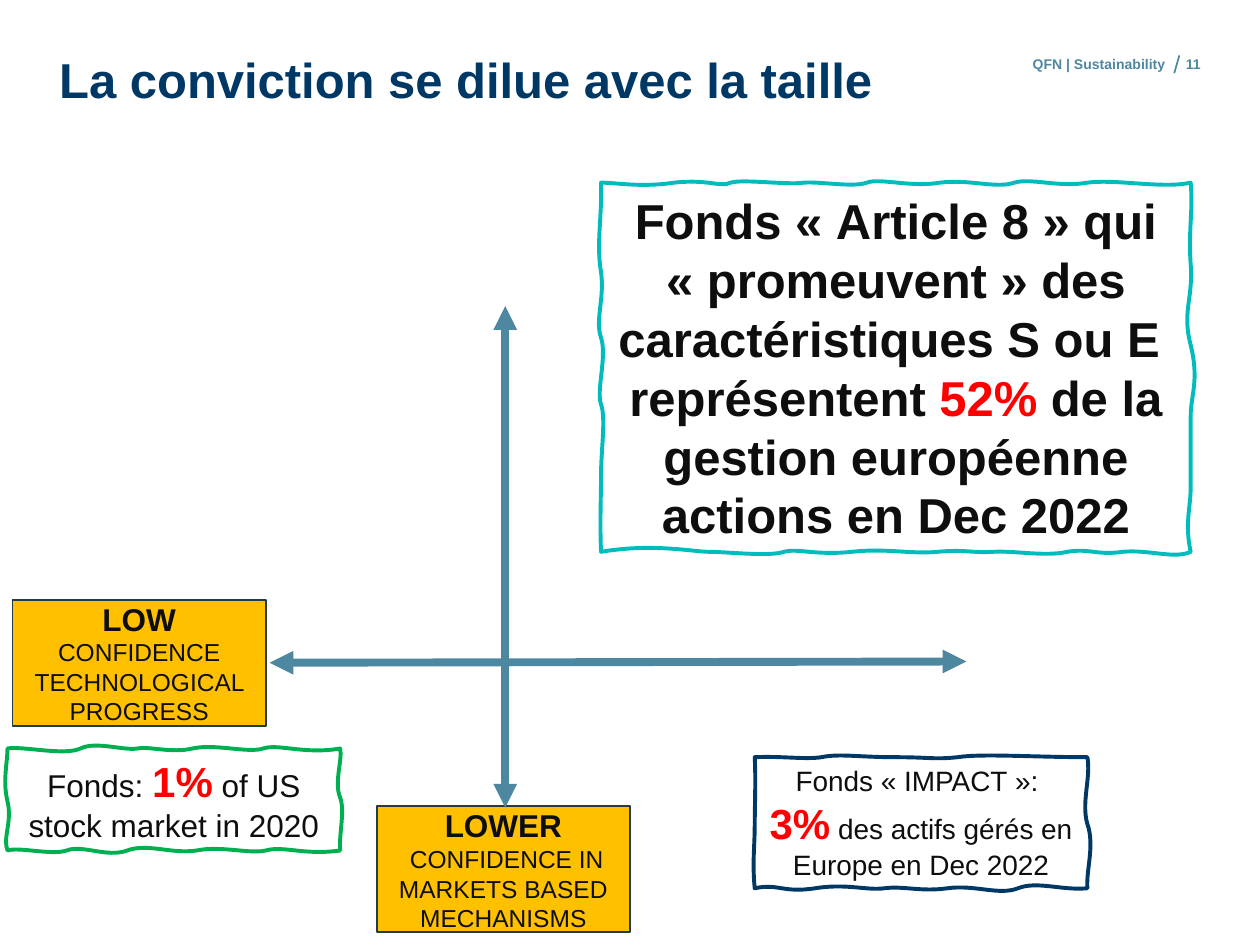
from dataclasses import dataclass

from lxml import etree
from pptx import Presentation
from pptx.dml.color import RGBColor
from pptx.enum.shapes import MSO_CONNECTOR, MSO_SHAPE
from pptx.enum.text import MSO_ANCHOR, PP_ALIGN
from pptx.oxml.ns import qn
from pptx.util import Inches, Pt

STRAIGHT = MSO_CONNECTOR.STRAIGHT
RECTANGLE = MSO_SHAPE.RECTANGLE
TOP, MIDDLE = MSO_ANCHOR.TOP, MSO_ANCHOR.MIDDLE
LEFT, CENTER, RIGHT = PP_ALIGN.LEFT, PP_ALIGN.CENTER, PP_ALIGN.RIGHT

FONT = "Arial"
NBSP = chr(160)  # keeps French quotation marks with their word
COLORS = {
    "navy": "003865", "steel": "4E87A0", "ink": "0E0E0E", "red": "FF0000",
    "amber": "FFC000", "edge": "223B46", "green": "00B050", "teal": "00BCBC",
}


@dataclass
class Run:
    text: str
    size: float
    bold: bool = False
    color: str = "ink"


@dataclass
class Label:
    left: float
    top: float
    width: float
    height: float
    run: Run
    align: PP_ALIGN
    anchor: MSO_ANCHOR = TOP
    spacing: float = 1.0


@dataclass
class ConfidenceBox:
    left: float
    top: float
    paragraphs: list[list[Run]]


@dataclass
class SketchedNote:
    color: str
    start: tuple[float, float]
    curves: list[tuple[float, ...]]  # two control points and an end point
    runs: list[Run]


@dataclass
class Axis:
    start: tuple[float, float]
    end: tuple[float, float]
    arrows: bool = True


def rgb(name: str) -> RGBColor:
    return RGBColor.from_string(COLORS[name])


def quoted(words: str) -> str:
    return f"«{NBSP}{words}{NBSP}»"


def write_text(frame, paragraphs: list[list[Run]], align, anchor, spacing: float = 1.0) -> None:
    frame.word_wrap = True
    frame.vertical_anchor = anchor
    for index, runs in enumerate(paragraphs):
        paragraph = frame.add_paragraph() if index else frame.paragraphs[0]
        paragraph.alignment = align
        paragraph.line_spacing = spacing
        for item in runs:
            run = paragraph.add_run()
            run.text = item.text
            run.font.name = FONT
            run.font.size = Pt(item.size)
            run.font.bold = item.bold
            run.font.color.rgb = rgb(item.color)


def draw_label(shapes, label: Label) -> None:
    box = shapes.add_textbox(Inches(label.left), Inches(label.top),
                             Inches(label.width), Inches(label.height))
    frame = box.text_frame
    frame.margin_left = frame.margin_right = frame.margin_top = frame.margin_bottom = 0
    write_text(frame, [[label.run]], label.align, label.anchor, label.spacing)


def draw_confidence_box(shapes, box: ConfidenceBox) -> None:
    shape = shapes.add_shape(RECTANGLE, Inches(box.left), Inches(box.top),
                             Inches(2.01), Inches(1))
    shape.shadow.inherit = False
    shape.fill.solid()
    shape.fill.fore_color.rgb = rgb("amber")
    shape.line.color.rgb = rgb("edge")
    shape.line.width = Pt(1)
    write_text(shape.text_frame, box.paragraphs, CENTER, MIDDLE)


def draw_axis(shapes, axis: Axis) -> None:
    line = shapes.add_connector(STRAIGHT, *map(Inches, axis.start + axis.end))
    line.line.color.rgb = rgb("steel")
    line.line.width = Pt(4.5 if axis.arrows else 1)
    if axis.arrows:
        outline = line.line._get_or_add_ln()
        for end in ("a:headEnd", "a:tailEnd"):
            etree.SubElement(outline, qn(end), type="triangle")
    etree.SubElement(line._element.spPr, qn("a:effectLst"))


def bend_sides(shape, curves: list[tuple[float, ...]]) -> None:
    """Turn each straight side of a freeform into a cubic curve."""
    sides = list(shape._element.iter(qn("a:lnTo")))
    for side, curve in zip(sides, curves):
        bend = etree.Element(qn("a:cubicBezTo"))
        for x, y in zip(curve[::2], curve[1::2]):
            etree.SubElement(bend, qn("a:pt"), x=str(Inches(x) - shape.left),
                             y=str(Inches(y) - shape.top))
        side.getparent().replace(side, bend)


def draw_note(shapes, note: SketchedNote) -> None:
    builder = shapes.build_freeform(*map(Inches, note.start))
    corners = [(Inches(curve[4]), Inches(curve[5])) for curve in note.curves]
    builder.add_line_segments(corners, close=True)
    shape = builder.convert_to_shape()
    bend_sides(shape, note.curves)
    shape.shadow.inherit = False
    shape.fill.background()
    shape.line.color.rgb = rgb(note.color)
    shape.line.width = Pt(2.25)
    write_text(shape.text_frame, [note.runs], CENTER, MIDDLE)


# Header
LABELS = [
    Label(0.47, 0.44, 8.08, 0.43, Run("La conviction se dilue avec la taille", 28, True, "navy"),
          LEFT, MIDDLE, 0.9),
    Label(7.44, 0.44, 1.81, 0.2, Run("QFN | Sustainability", 8, True, "steel"), RIGHT),
    Label(9.25, 0.44, 0.28, 0.2, Run("11", 8, True, "steel"), RIGHT),
]
HEADER_SLASH = Axis((9.36, 0.44), (9.32, 0.58), arrows=False)

# Confidence axes and their low ends
MARKETS_BOX = ConfidenceBox(2.99, 6.4, [
    [Run("LOWER", 18, True)], [Run(" CONFIDENCE IN MARKETS BASED MECHANISMS", 14)]])
MARKETS_AXIS = Axis((4.01, 2.43), (4.01, 6.41))
PROGRESS_AXIS = Axis((7.67, 5.25), (2.14, 5.26))
PROGRESS_BOX = ConfidenceBox(0.1, 4.76, [
    [Run("LOW", 18, True), Run(" CONFIDENCE TECHNOLOGICAL PROGRESS", 14)]])

# Hand-drawn notes, outlined clockwise from the top left
US_FUNDS = SketchedNote("green", (0.06, 5.94), [
    (0.19, 5.92, 0.51, 6, 0.64, 5.94), (0.76, 5.88, 0.99, 5.96, 1.09, 5.94),
    (1.18, 5.92, 1.36, 5.98, 1.53, 5.94), (1.71, 5.9, 1.97, 5.98, 2.09, 5.94),
    (2.21, 5.9, 2.42, 5.99, 2.7, 5.94), (2.72, 6.03, 2.65, 6.21, 2.7, 6.33),
    (2.74, 6.44, 2.69, 6.61, 2.7, 6.75), (2.41, 6.79, 2.25, 6.71, 2.11, 6.75),
    (1.98, 6.78, 1.76, 6.71, 1.56, 6.75), (1.36, 6.78, 1.17, 6.69, 1.01, 6.75),
    (0.85, 6.81, 0.65, 6.7, 0.53, 6.75), (0.41, 6.79, 0.15, 6.72, 0.06, 6.75),
    (0.02, 6.65, 0.1, 6.52, 0.06, 6.36), (0.02, 6.2, 0.06, 6.05, 0.06, 5.94),
], [Run("Fonds: ", 18), Run("1%", 24, True, "red"), Run(" of US stock market in 2020", 18)])

ARTICLE_8_FUNDS = SketchedNote("teal", (4.77, 1.45), [
    (4.9, 1.45, 5.08, 1.49, 5.35, 1.45), (5.63, 1.42, 5.71, 1.49, 5.8, 1.45),
    (5.89, 1.42, 6.25, 1.47, 6.38, 1.45), (6.52, 1.44, 6.77, 1.49, 6.88, 1.45),
    (6.98, 1.41, 7.23, 1.49, 7.46, 1.45), (7.69, 1.42, 7.91, 1.5, 8.05, 1.45),
    (8.18, 1.41, 8.4, 1.49, 8.63, 1.45), (8.86, 1.42, 9.23, 1.5, 9.45, 1.45),
    (9.47, 1.69, 9.43, 1.82, 9.45, 2.1), (9.47, 2.38, 9.38, 2.47, 9.45, 2.74),
    (9.52, 3.02, 9.45, 3.14, 9.45, 3.3), (9.45, 3.46, 9.45, 3.67, 9.45, 3.86),
    (9.45, 4.04, 9.4, 4.15, 9.45, 4.38), (9.32, 4.44, 9.12, 4.36, 8.91, 4.38),
    (8.7, 4.41, 8.65, 4.35, 8.47, 4.38), (8.29, 4.42, 8.06, 4.37, 7.88, 4.38),
    (7.71, 4.39, 7.66, 4.36, 7.44, 4.38), (7.22, 4.4, 7.04, 4.35, 6.76, 4.38),
    (6.47, 4.41, 6.33, 4.35, 6.22, 4.38), (6.11, 4.42, 5.77, 4.38, 5.63, 4.38),
    (5.5, 4.38, 5.18, 4.31, 4.77, 4.38), (4.76, 4.15, 4.77, 3.96, 4.77, 3.77),
    (4.77, 3.57, 4.81, 3.32, 4.77, 3.21), (4.73, 3.1, 4.82, 2.83, 4.77, 2.68),
    (4.72, 2.54, 4.8, 2.37, 4.77, 2.16), (4.73, 1.94, 4.78, 1.71, 4.77, 1.45),
], [Run(f"Fonds {quoted('Article 8')} qui {quoted('promeuvent')} des "
        "caractéristiques S ou E  représentent ", 28, True),
    Run("52%", 28, True, "red"),
    Run(" de la gestion européenne actions en Dec 2022", 28, True)])

IMPACT_FUNDS = SketchedNote("navy", (5.99, 6.01), [
    (6.21, 6, 6.39, 6.03, 6.52, 6.01), (6.66, 5.98, 6.82, 6.01, 7.1, 6.01),
    (7.39, 6.01, 7.41, 6.03, 7.6, 6.01), (7.8, 5.98, 8.21, 6.01, 8.63, 6.01),
    (8.66, 6.17, 8.58, 6.37, 8.63, 6.54), (8.69, 6.71, 8.62, 6.9, 8.63, 7.05),
    (8.43, 7.07, 8.23, 6.99, 8.08, 7.05), (7.93, 7.11, 7.74, 7.02, 7.52, 7.05),
    (7.31, 7.08, 7.17, 7.03, 7.02, 7.05), (6.88, 7.07, 6.72, 7.01, 6.47, 7.05),
    (6.21, 7.09, 6.18, 7.01, 5.99, 7.05), (5.97, 6.85, 5.99, 6.71, 5.99, 6.56),
    (5.99, 6.41, 6, 6.18, 5.99, 6.01),
], [Run(f"Fonds {quoted('IMPACT')}:  ", 16), Run("3%", 24, True, "red"),
    Run(" des actifs gérés en Europe en Dec 2022", 16)])


def main() -> None:
    deck = Presentation()
    deck.slide_width, deck.slide_height = Inches(10), Inches(7.5)
    shapes = deck.slides.add_slide(deck.slide_layouts[6]).shapes
    draw_axis(shapes, HEADER_SLASH)
    for label in LABELS:
        draw_label(shapes, label)
    draw_confidence_box(shapes, MARKETS_BOX)
    for axis in (MARKETS_AXIS, PROGRESS_AXIS):
        draw_axis(shapes, axis)
    draw_confidence_box(shapes, PROGRESS_BOX)
    for note in (US_FUNDS, ARTICLE_8_FUNDS, IMPACT_FUNDS):
        draw_note(shapes, note)
    deck.save("out.pptx")


if __name__ == "__main__":
    main()
